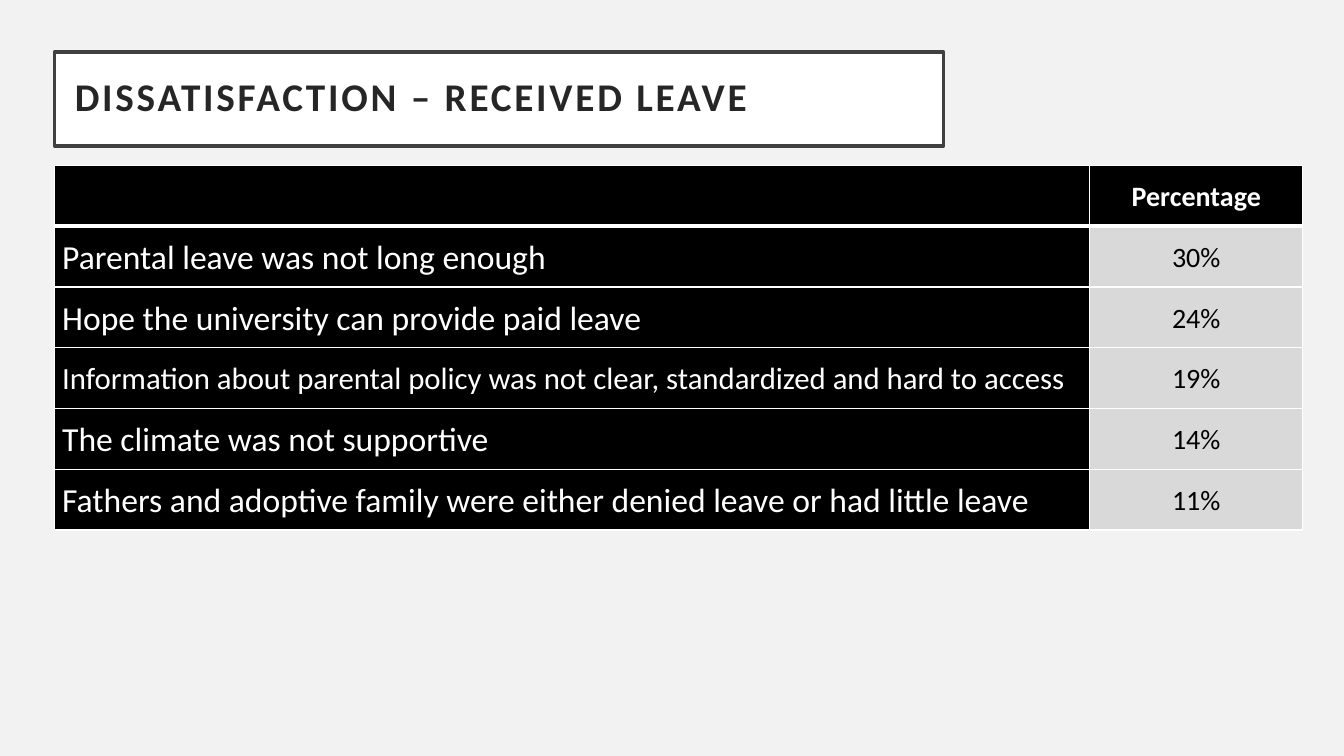
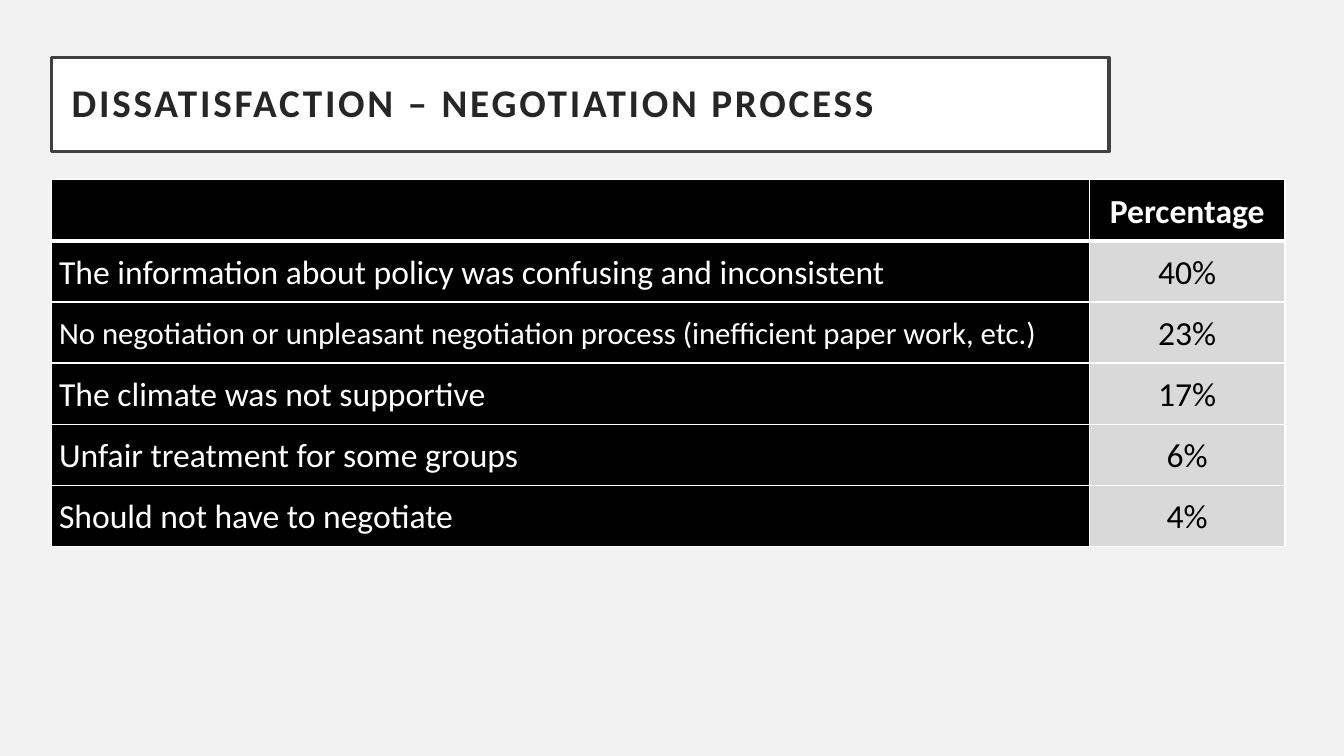
from dataclasses import dataclass

from lxml import etree
from pptx import Presentation
from pptx.dml.color import RGBColor
from pptx.enum.shapes import MSO_SHAPE
from pptx.enum.text import MSO_ANCHOR, PP_ALIGN
from pptx.oxml.ns import qn
from pptx.util import Pt

RECTANGLE = MSO_SHAPE.RECTANGLE
MIDDLE = MSO_ANCHOR.MIDDLE
LEFT, CENTER, JUSTIFY = PP_ALIGN.LEFT, PP_ALIGN.CENTER, PP_ALIGN.JUSTIFY

COLORS = {
    "background": "F2F2F2",
    "white": "FFFFFF",
    "black": "000000",
    "value": "D9D9D9",
    "frame": "404040",
    "title": "262626",
}
FONT = "Calibri"
BLANK_LAYOUT = 6
TITLE_HEIGHT = 67
TITLE_INSET = 14.4
CELL_INSETS = {
    "margin_left": Pt(5.4),
    "margin_right": Pt(5.4),
    "margin_top": Pt(0),
    "margin_bottom": Pt(0),
}
TITLE_INSETS = {side: Pt(TITLE_INSET) for side in CELL_INSETS}
THIN, THICK = 1, 3


@dataclass(frozen=True)
class Reason:
    label: str
    share: str
    size: float = 24


@dataclass(frozen=True)
class Survey:
    title: str
    left: float
    title_top: float
    title_width: float
    table_top: float
    column_widths: tuple[float, float]
    row_height: float
    share_size: float
    reasons: tuple[Reason, ...]


SURVEYS = (
    Survey(
        "DISSATISFACTION – RECEIVED LEAVE",
        left=39, title_top=37.2, title_width=635, table_top=118.2,
        column_widths=(739.5, 152), row_height=43.4, share_size=20,
        reasons=(
            Reason("Parental leave was not long enough", "30%"),
            Reason("Hope the university can provide paid leave", "24%"),
            Reason("Information about parental policy was not clear, "
                   "standardized and hard to access", "19%", 22),
            Reason("The climate was not supportive", "14%"),
            Reason("Fathers and adoptive family were either denied leave "
                   "or had little leave", "11%"),
        ),
    ),
    Survey(
        "DISSATISFACTION – NEGOTIATION PROCESS",
        left=36.8, title_top=41.2, title_width=755.3, table_top=128.3,
        column_widths=(741.4, 139.7), row_height=43.7, share_size=24,
        reasons=(
            Reason("The information about policy was confusing and inconsistent", "40%"),
            Reason("No negotiation or unpleasant negotiation process "
                   "(inefficient paper work, etc.)", "23%", 22),
            Reason("The climate was not supportive", "17%"),
            Reason("Unfair treatment for some groups", "6%"),
            Reason("Should not have to negotiate", "4%"),
        ),
    ),
)


def rgb(name: str) -> RGBColor:
    return RGBColor.from_string(COLORS[name])


def apply_format(target, values: dict) -> None:
    for attribute, value in values.items():
        setattr(target, attribute, value)


def write(frame, text: str, size: float, color: str, bold: bool, align, spacing: float):
    """Fill the first paragraph of a text frame and return its run."""
    paragraph = frame.paragraphs[0]
    apply_format(paragraph, {"alignment": align, "line_spacing": spacing})
    run = paragraph.add_run()
    run.text = text
    apply_format(run.font, {"name": FONT, "size": Pt(size), "bold": bold})
    run.font.color.rgb = rgb(color)
    return run


def add_title(slide, survey: Survey) -> None:
    box = slide.shapes.add_shape(
        RECTANGLE, Pt(survey.left), Pt(survey.title_top),
        Pt(survey.title_width), Pt(TITLE_HEIGHT))
    box.shadow.inherit = False
    box.fill.solid()
    box.fill.fore_color.rgb = rgb("white")
    box.line.color.rgb = rgb("frame")
    box.line.width = Pt(2.5)
    apply_format(box.text_frame, {
        **TITLE_INSETS, "vertical_anchor": MIDDLE, "word_wrap": True})
    run = write(box.text_frame, survey.title, 28, "title", True, LEFT, 0.9)
    run.font._element.set("spc", "200")


def add_borders(cell, top: float, bottom: float) -> None:
    properties = cell._tc.get_or_add_tcPr()
    widths = {"a:lnL": THIN, "a:lnR": THIN, "a:lnT": top, "a:lnB": bottom}
    # Borders come before the fill in the cell properties
    for position, (tag, width) in enumerate(widths.items()):
        border = etree.Element(qn(tag), w=str(Pt(width)))
        fill = etree.SubElement(border, qn("a:solidFill"))
        etree.SubElement(fill, qn("a:srgbClr"), val=COLORS["white"])
        properties.insert(position, border)


def style_cell(cell, fill: str, row: int) -> None:
    apply_format(cell, {**CELL_INSETS, "vertical_anchor": MIDDLE})
    cell.fill.solid()
    cell.fill.fore_color.rgb = rgb(fill)
    add_borders(cell, THICK if row == 1 else THIN, THICK if row == 0 else THIN)


def add_reasons(slide, survey: Survey) -> None:
    row_count = len(survey.reasons) + 1
    table = slide.shapes.add_table(
        row_count, 2, Pt(survey.left), Pt(survey.table_top),
        Pt(sum(survey.column_widths)), Pt(survey.row_height * row_count)).table
    for column, width in zip(table.columns, survey.column_widths):
        column.width = Pt(width)
    for row in table.rows:
        row.height = Pt(survey.row_height)

    # Header row
    for column in range(2):
        style_cell(table.cell(0, column), "black", 0)
    write(table.cell(0, 1).text_frame, "Percentage", survey.share_size,
          "white", True, CENTER, 1.07)

    # One row per reason
    for row, reason in enumerate(survey.reasons, start=1):
        label, share = table.cell(row, 0), table.cell(row, 1)
        style_cell(label, "black", row)
        style_cell(share, "value", row)
        write(label.text_frame, reason.label, reason.size, "white", False, JUSTIFY, 1.07)
        write(share.text_frame, reason.share, survey.share_size,
              "black", False, CENTER, 1.07)


def main() -> None:
    deck = Presentation()
    deck.slide_width, deck.slide_height = Pt(960), Pt(540)

    # Shared background
    backdrop = deck.slide_master.background.fill
    backdrop.solid()
    backdrop.fore_color.rgb = rgb("background")

    for survey in SURVEYS:
        slide = deck.slides.add_slide(deck.slide_layouts[BLANK_LAYOUT])
        add_reasons(slide, survey)
        add_title(slide, survey)
    deck.save("out.pptx")


if __name__ == "__main__":
    main()
